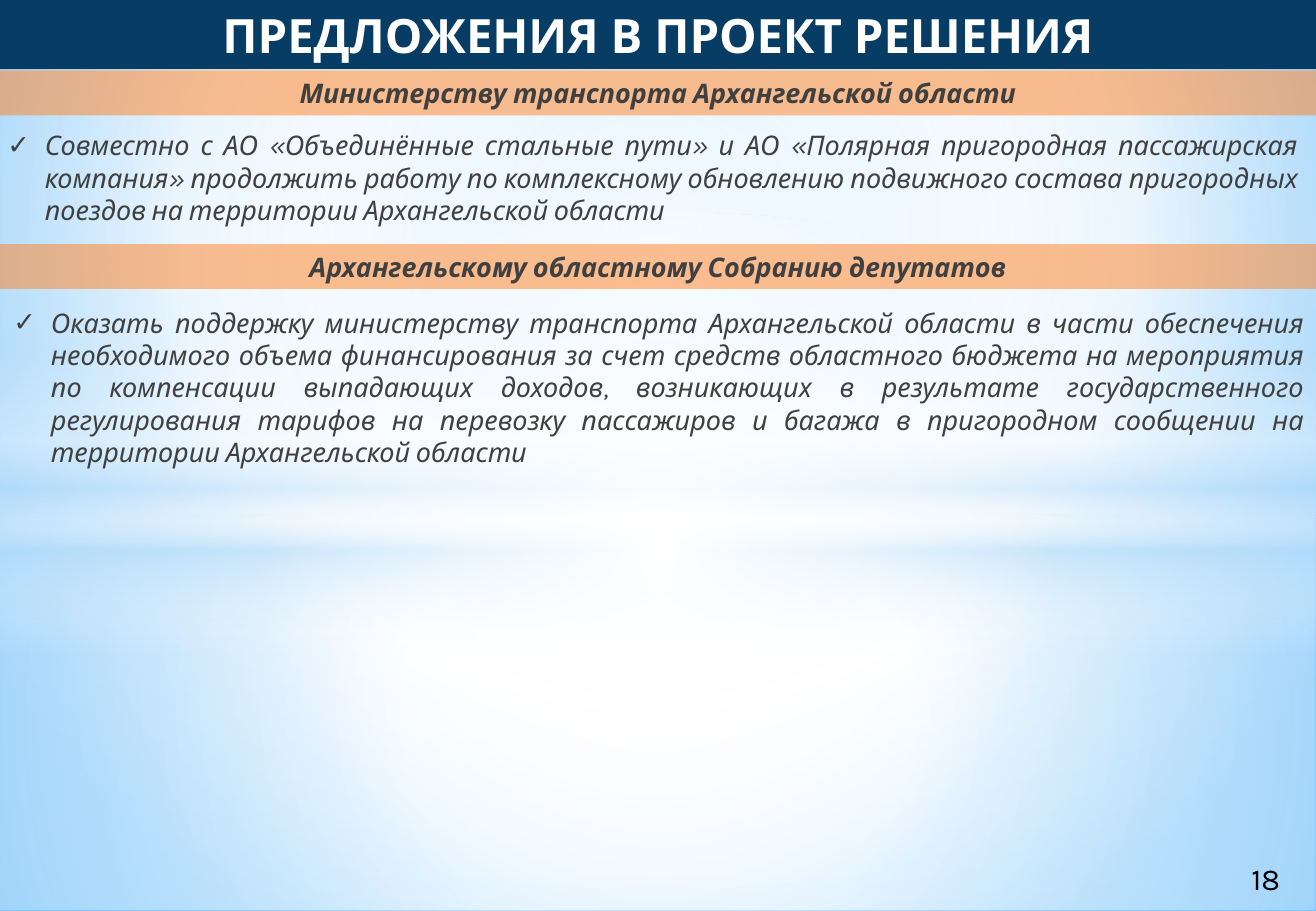
from lxml.etree import SubElement
from pptx import Presentation
from pptx.dml.color import RGBColor
from pptx.enum.shapes import MSO_SHAPE as Preset
from pptx.enum.text import MSO_ANCHOR as Anchor, MSO_AUTO_SIZE as AutoSize, PP_ALIGN as Align
from pptx.oxml.ns import qn
from pptx.util import Inches, Pt

WIDTH, HEIGHT = Inches(10.83), Inches(7.5)
FONT = "Karla"
NAVY, ORANGE, GREY, WHITE, BLACK = "073C65", "FF8021", "404040", "FFFFFF", "000000"
PALE_BLUE = "B4DCFA"
CENTER = (50, 50, 50, 50)
BACKGROUND_STOPS = [(0, "9ED5FF", 100), (60, WHITE, 100), (100, "5BB9FF", 100)]
GLOWS = [
    (Preset.RECTANGLE, (0, 56.4, 100, 43.6), CENTER,
     [(0, WHITE, 91), (37, WHITE, 76), (100, PALE_BLUE, 79)]),
    (Preset.RECTANGLE, (0, 0, 100, 56.4), CENTER,
     [(0, WHITE, 89), (48, WHITE, 62), (100, PALE_BLUE, 79)]),
    (Preset.RECTANGLE, (0, 38.67, 100, 33.33), None,
     [(0, WHITE, 0), (29, WHITE, 30), (45, PALE_BLUE, 40),
      (55, WHITE, 26), (65, PALE_BLUE, 60), (100, WHITE, 0)]),
    (Preset.OVAL, (0, 23.33, 100, 74.4), CENTER, [(0, WHITE, 100), (54, WHITE, 0)]),
]
SECTIONS = [
    ("Министерству транспорта Архангельской области", (0, 7.73, 100, 4.93),
     "Совместно с АО «Объединённые стальные пути» и АО «Полярная пригородная "
     "пассажирская компания» продолжить работу по комплексному обновлению подвижного "
     "состава пригородных поездов на территории Архангельской области",
     (-0.37, 13.47, 100, 12.13)),
    ("Архангельскому областному Собранию депутатов", (0, 26.8, 100, 4.93),
     "Оказать поддержку министерству транспорта Архангельской области в части "
     "обеспечения необходимого объема финансирования за счет средств областного бюджета "
     "на мероприятия по компенсации выпадающих доходов, возникающих в результате "
     "государственного регулирования тарифов на перевозку пассажиров и багажа в "
     "пригородном сообщении на территории Архангельской области",
     (0.09, 32.93, 100, 19.33)),
]


def color(value):
    """Turn a hex string into a colour."""
    return RGBColor.from_string(value)


def area(left, top, width, height):
    """Turn percentages of the slide into lengths."""
    return (int(WIDTH * left / 100), int(HEIGHT * top / 100),
            int(WIDTH * width / 100), int(HEIGHT * height / 100))


def place(shape, box):
    """Move a shape to its share of the slide."""
    shape.left, shape.top, shape.width, shape.height = area(*box)


def set_alpha(color_element, percent):
    """Set the opacity of a colour element."""
    SubElement(color_element, qn("a:alpha"), val=str(percent * 1000))


def fill_solid(shape, value, opacity=100):
    """Fill a shape with one colour."""
    shape.fill.solid()
    shape.fill.fore_color.rgb = color(value)
    if opacity < 100:
        set_alpha(shape._element.spPr.find(f".//{qn('a:srgbClr')}"), opacity)


def fill_gradient(properties, stops, focus=None):
    """Swap a solid fill for a radial gradient, or a vertical one without focus."""
    solid = properties.find(qn("a:solidFill"))
    gradient = SubElement(properties, qn("a:gradFill"), rotWithShape="1")
    properties.replace(solid, gradient)
    stop_list = SubElement(gradient, qn("a:gsLst"))
    for position, value, opacity in stops:
        stop = SubElement(stop_list, qn("a:gs"), pos=str(position * 1000))
        set_alpha(SubElement(stop, qn("a:srgbClr"), val=value), opacity)
    if focus:
        radial = SubElement(gradient, qn("a:path"), path="circle")
        sides = {side: str(share * 1000) for side, share in zip("ltrb", focus)}
        SubElement(radial, qn("a:fillToRect"), **sides)
    else:
        SubElement(gradient, qn("a:lin"), ang="5400000", scaled="0")


def add_backdrop(slide):
    """Paint the background and its glows behind all text."""
    slide.background.fill.solid()
    fill_gradient(slide.element.find(f".//{qn('p:bgPr')}"), BACKGROUND_STOPS, (20, 10, 20, 60))
    for order, (preset, box, focus, stops) in enumerate(GLOWS, start=2):
        glow = slide.shapes.add_shape(preset, *area(*box))
        glow.shadow.inherit = False
        glow.line.fill.background()
        fill_solid(glow, WHITE)
        fill_gradient(glow._element.spPr, stops, focus)
        slide.shapes._spTree.insert(order, glow._element)


def add_bullet(paragraph):
    """Give a paragraph a hanging check mark."""
    properties = paragraph._p.get_or_add_pPr()
    properties.set("marL", str(Inches(0.31)))
    properties.set("indent", str(-Inches(0.31)))
    SubElement(properties, qn("a:buFont"), typeface="Arial")
    SubElement(properties, qn("a:buChar"), char="✓")


def write(shape, text, size, value, align, bold=False, italic=False, bullet=False,
          anchor=Anchor.TOP):
    """Write one formatted paragraph into a shape."""
    frame = shape.text_frame
    frame.text = text
    frame.word_wrap = True
    frame.auto_size = AutoSize.NONE
    frame.vertical_anchor = anchor
    paragraph = frame.paragraphs[0]
    if bullet:
        add_bullet(paragraph)
    paragraph.alignment = align
    paragraph.space_before = Pt(0)
    paragraph.space_after = Pt(8 if bullet else 0)
    font = paragraph.font
    font.name, font.size, font.bold, font.italic = FONT, Pt(size), bold, italic
    font.color.rgb = color(value)


def add_band(shape, box, text, size, value, fill, opacity=100, italic=False):
    """Make a placeholder a full-width coloured heading."""
    place(shape, box)
    fill_solid(shape, fill, opacity)
    write(shape, text, size, value, Align.CENTER, bold=True, italic=italic,
          anchor=Anchor.MIDDLE)


def add_section(heading, body, section):
    """Fill a heading and the proposal below it."""
    title, title_box, proposal, proposal_box = section
    add_band(heading, title_box, title, 16, GREY, ORANGE, opacity=50, italic=True)
    place(body, proposal_box)
    write(body, proposal, 16, GREY, Align.JUSTIFY, italic=True, bullet=True)


def add_page_number(slide, number):
    """Put the page number in the lower right corner."""
    box = slide.shapes.add_textbox(*area(94.18, 93.73, 4.99, 5.33))
    write(box, number, 18, BLACK, Align.LEFT)


def main():
    """Build and save the slide."""
    presentation = Presentation()
    presentation.slide_width, presentation.slide_height = WIDTH, HEIGHT
    slide = presentation.slides.add_slide(presentation.slide_layouts.get_by_name("Comparison"))
    add_backdrop(slide)
    title, *bodies = slide.placeholders
    add_band(title, (0, 0, 100, 7.6), "ПРЕДЛОЖЕНИЯ В ПРОЕКТ РЕШЕНИЯ", 28, WHITE, NAVY)
    for heading, body, section in zip(bodies[::2], bodies[1::2], SECTIONS):
        add_section(heading, body, section)
    add_page_number(slide, "18")
    presentation.save("out.pptx")


if __name__ == "__main__":
    main()
